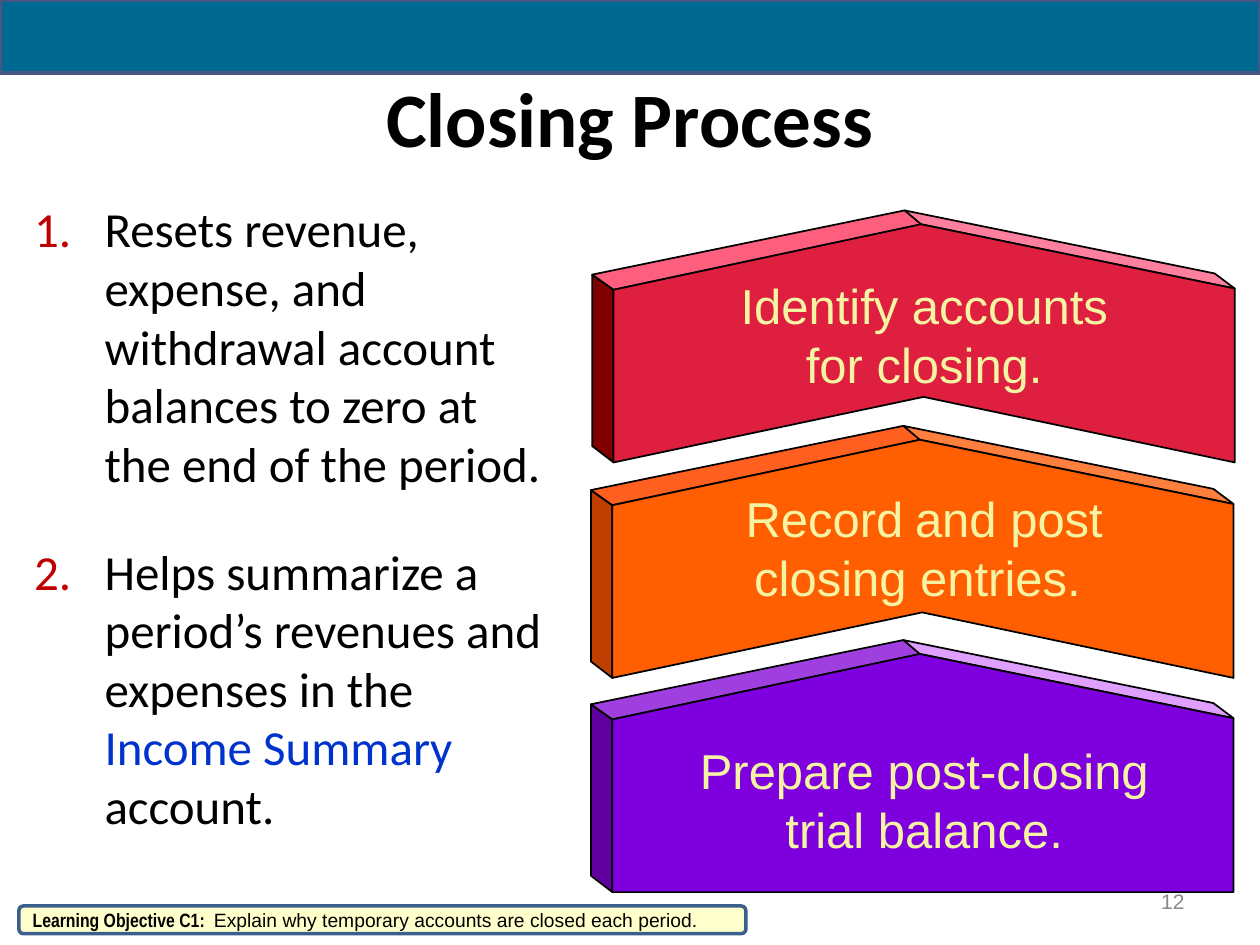
"""Build the Closing Process slide with its three stacked chevron blocks."""
from lxml import etree
from pptx import Presentation
from pptx import util as u
from pptx.dml.color import RGBColor
from pptx.enum import shapes, text
from pptx.oxml.ns import qn

PX = 9144
COLORS = {
    "black": "000000", "number": "C00000", "link": "0033CC", "cream": "F4F4A3",
    "band": "006991", "band_line": "475785", "gray": "898989",
    "note": "FFFFCC", "note_line": "3A5F8C",
}
TITLE = {"name": "Calibri", "size": u.Pt(44), "bold": True}
BODY = {"name": "Calibri", "size": u.Pt(28)}
STEP = {"name": "Arial", "size": u.Pt(28)}
SMALL = {"name": "Arial", "size": u.Pt(12)}
NOTE = {"name": "Arial", "size": u.Pt(11), "bold": False}
NOTE_HEAD = {"name": "Arial Narrow", "size": u.Pt(11), "bold": True}
LINES = {"line_spacing": u.Pt(33.5)}
CENTER = {"alignment": text.PP_ALIGN.CENTER}
MIDDLE = {"vertical_anchor": text.MSO_ANCHOR.MIDDLE, "word_wrap": True}

SIDE = [(17, 63), (17, 200), (0, 187), (0, 51)]
ROOF_LEFT = [(0, 51), (17, 63), (262, 11), (248, 0)]
ROOF_RIGHT = [(248, 0), (261, 11), (510, 62), (494, 50)]
NOTCHED = [(17, 63), (17, 200), (263, 148), (510, 200), (510, 62), (261, 11)]
FLAT = [point for point in NOTCHED if point != (263, 148)]

BLOCKS = [
    (470, 167, 214, NOTCHED, ["800000", "FF5F7F", "FF7F9F", "DF1F3F"],
     [("Identify accounts\nfor closing.", STEP, "cream")]),
    (469, 338, 383, NOTCHED, ["BF3F00", "FF5F1F", "FF7F3F", "FF5F00"],
     [("Record", STEP, "cream"), (" ", {**STEP, "size": u.Pt(24)}, "cream"),
      ("and post\nclosing entries. ", STEP, "cream")]),
    (469, 508, 583, FLAT, ["5F009F", "9F3FDF", "DF9FFF", "7F00DF"],
     [("Prepare post-closing\ntrial balance.", STEP, "cream")]),
]
POINTS = [
    [("Resets revenue, expense, and withdrawal account balances to zero "
      "at the end of the period.", BODY, "black")],
    [("Helps summarize a period’s revenues and expenses in the ", BODY, "black"),
     ("Income Summary ", BODY, "link"), ("account.", BODY, "black")],
]


def assign(target, formats):
    """Set each attribute in formats on target."""
    for name, value in formats.items():
        setattr(target, name, value)


class SlideBuilder:
    """Hold the style and current slide, and add each kind of element."""

    def __init__(self, page, colors):
        """Keep the page and the palette."""
        self.page = page
        self.colors = colors

    def place(self, box, at):
        """Move a box to left, top, width, height in px."""
        assign(box, dict(zip(("left", "top", "width", "height"), (n * PX for n in at))))

    def paint(self, shape, fill, line, width):
        """Give a shape a flat fill and outline."""
        shape.shadow.inherit = False
        shape.fill.solid()
        shape.fill.fore_color.rgb = RGBColor.from_string(fill)
        shape.line.color.rgb = RGBColor.from_string(line)
        shape.line.width = u.Pt(width)

    def fill_para(self, para, spans, formats):
        """Fill a paragraph with styled spans, breaking lines at newlines."""
        assign(para, formats)
        for words, font, color in spans:
            for index, line in enumerate(words.split("\n")):
                if index:
                    para.add_line_break()
                span = para.add_run()
                span.text = line
                assign(span.font, font)
                span.font.color.rgb = RGBColor.from_string(self.colors[color])

    def title(self, words, at):
        """Fill the title placeholder."""
        box = self.page.shapes.title
        self.place(box, at)
        assign(box.text_frame, {**MIDDLE, "auto_size": text.MSO_AUTO_SIZE.NONE})
        self.fill_para(box.text_frame.paragraphs[0], [(words, TITLE, "black")], CENTER)

    def numbered(self, items, at):
        """Fill the body placeholder with a numbered list."""
        box = self.page.placeholders[1]
        self.place(box, at)
        frame = box.text_frame
        assign(frame, {"auto_size": text.MSO_AUTO_SIZE.NONE, "margin_top": 8 * PX})
        for index, spans in enumerate(items):
            para = frame.add_paragraph() if index else frame.paragraphs[0]
            self.fill_para(para, spans, {**LINES, "space_before": u.Pt(28 if index else 0)})
            props = para._p.get_or_add_pPr()
            props.set("marL", str(56 * PX))
            props.set("indent", str(-56 * PX))
            tint = etree.SubElement(props, qn("a:buClr"))
            etree.SubElement(tint, qn("a:srgbClr"), val=self.colors["number"])
            etree.SubElement(props, qn("a:buFont"), typeface="+mj-lt")
            etree.SubElement(props, qn("a:buAutoNum"), type="arabicPeriod")

    def label(self, spans, at, formats, frame_formats, parent=None):
        """Add a text box to the page or to a group."""
        box = (parent or self.page).shapes.add_textbox(*(n * PX for n in at))
        assign(box.text_frame, frame_formats)
        self.fill_para(box.text_frame.paragraphs[0], spans, formats)

    def block(self, left, top, label_top, front, fills, spans):
        """Add a grouped solid chevron with its label."""
        group = self.page.shapes.add_group_shape()
        for face, fill in zip((SIDE, ROOF_LEFT, ROOF_RIGHT, front), fills):
            corners = [(left + x, top + y) for x, y in face]
            outline = group.shapes.build_freeform(*corners[0], scale=PX)
            outline.add_line_segments(corners[1:], close=True)
            self.paint(outline.convert_to_shape(), fill, self.colors["black"], 1)
        self.label(spans, (508, label_top, 451, 104), {**CENTER, **LINES},
                   {"word_wrap": True}, group)

    def panel(self, kind, at, color, width, spans=()):
        """Add a filled preset shape with optional text."""
        shape = self.page.shapes.add_shape(kind, *(n * PX for n in at))
        self.paint(shape, self.colors[color], self.colors[color + "_line"], width)
        if spans:
            assign(shape.text_frame, MIDDLE)
            self.fill_para(shape.text_frame.paragraphs[0], spans,
                           {"alignment": text.PP_ALIGN.LEFT})


def main():
    """Build and save the deck."""
    deck = Presentation()
    assign(deck, {"slide_width": 1000 * PX, "slide_height": 750 * PX})
    builder = SlideBuilder(deck.slides.add_slide(deck.slide_layouts[1]), COLORS)
    builder.title("Closing Process", (50, 30, 900, 125))
    builder.numbered(POINTS, (17, 150, 425, 575))
    for block in BLOCKS:
        builder.block(*block)
    builder.panel(shapes.MSO_SHAPE.RECTANGLE, (0, 0, 1000, 58), "band", 2.25)
    builder.label([("12", SMALL, "gray")], (717, 695, 233, 40),
                  {"alignment": text.PP_ALIGN.RIGHT}, MIDDLE)
    builder.panel(shapes.MSO_SHAPE.ROUNDED_RECTANGLE, (15, 719, 577, 22), "note", 2, [
        ("Learning Objective C1:  ", NOTE_HEAD, "black"),
        ("Explain why temporary accounts are closed each period.", NOTE, "black")])
    deck.save("out.pptx")


if __name__ == "__main__":
    main()
